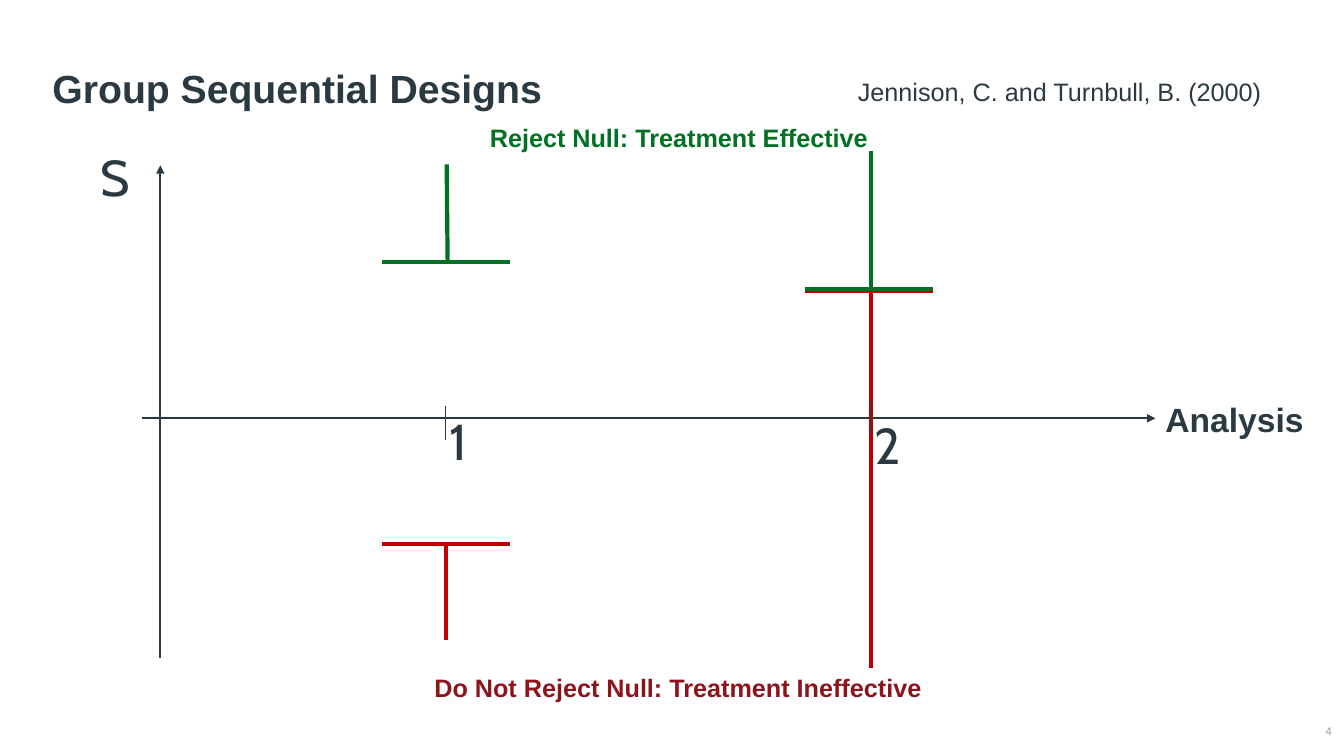
from lxml.etree import SubElement
from pptx import Presentation
from pptx.dml.color import RGBColor
from pptx.enum.shapes import MSO_CONNECTOR
from pptx.enum.text import MSO_ANCHOR, MSO_AUTO_SIZE, PP_ALIGN
from pptx.oxml.ns import qn
from pptx.util import Inches, Pt

WIDTH, HEIGHT = 13.33, 7.5
INK, GREEN, RED, DARK_RED, GREY = "2B3A42", "027123", "C00000", "8C151C", "959CA0"

TITLE = "Group Sequential Designs"
AXIS_Y, AXIS_X = 4.15, 1.59
BAR_WIDTH, TICK_HEIGHT = 1.27, 0.34

# start, end
AXES = [
    ((AXIS_X, 6.53), (AXIS_X, 1.64)),
    ((1.41, AXIS_Y), (11.46, AXIS_Y)),
]
# bar left, bar height on the slide, stem x at the bar, stem end, colour
BOUNDARIES = [
    (3.79, 5.4, 4.42, (4.42, 6.35), RED),
    (7.98, 2.89, 8.64, (8.64, 6.63), RED),
    (3.79, 2.6, 4.44, (4.43, 1.63), GREEN),
    (7.98, 2.87, 8.64, (8.64, 1.5), GREEN),
]
# centre of each analysis tick
TICKS = [(4.42, 4.2), (8.63, AXIS_Y)]
# text, left, top, width, height, size, font, colour, bold
LABELS = [
    ("S", 0.9, 1.4, 0.69, 0.71, 36, "Cabin", INK, False),
    ("Reject Null: Treatment Effective", 4.76, 1.16, 4.18, 0.4, 18, "Arial", GREEN, True),
    ("Do Not Reject Null: Treatment Ineffective", 4.21, 6.62, 5.3, 0.4, 18, "Arial", DARK_RED, True),
    ("Jennison, C. and Turnbull, B. (2000)", 8.41, 0.71, 4.8, 0.4, 18, "Arial", INK, False),
    ("Analysis", 11.46, 3.91, 1.87, 0.5, 24, "Arial", INK, True),
    ("1", 4.36, 4.02, 0.69, 0.71, 36, "Cabin", INK, False),
    ("2", 8.57, 4.06, 0.69, 0.71, 36, "Cabin", INK, False),
]
PAGE_NUMBER = ("4", 12.82, 7.16, 0.39, 0.19, 8, "Arial", GREY, False)


def rgb(value):
    return RGBColor.from_string(value)


def place(shape, left, top, width, height):
    shape.left, shape.top = Inches(left), Inches(top)
    shape.width, shape.height = Inches(width), Inches(height)


def write(shape, text, size, font_name, color, bold):
    """Fill a shape with one formatted paragraph and return the paragraph."""
    shape.text_frame.text = text
    paragraph = shape.text_frame.paragraphs[0]
    font = paragraph.runs[0].font
    font.size, font.name, font.bold = Pt(size), font_name, bold
    font.color.rgb = rgb(color)
    return paragraph


def add_line(slide, start, end, color, weight, arrow=False):
    line = slide.shapes.add_connector(
        MSO_CONNECTOR.STRAIGHT, *(Inches(value) for value in (*start, *end)))
    line.line.color.rgb = rgb(color)
    line.line.width = Pt(weight)
    if arrow:
        SubElement(line.line._get_or_add_ln(), qn("a:tailEnd"), type="triangle")
    SubElement(line._element.spPr, qn("a:effectLst"))


def add_label(slide, text, left, top, width, height, *style):
    box = slide.shapes.add_textbox(0, 0, 0, 0)
    place(box, left, top, width, height)
    box.text_frame.word_wrap = True
    box.text_frame.auto_size = MSO_AUTO_SIZE.SHAPE_TO_FIT_TEXT
    write(box, text, *style)
    return box


def add_title(slide):
    title = slide.shapes.title
    place(title, 0.42, 0.32, 12.4, 0.84)
    paragraph = write(title, TITLE, 28, "Arial", INK, True)
    paragraph.alignment = PP_ALIGN.LEFT
    paragraph.line_spacing = 0.9
    title.text_frame.vertical_anchor = MSO_ANCHOR.BOTTOM


def add_page_number(slide):
    box = add_label(slide, *PAGE_NUMBER)
    frame = box.text_frame
    frame.auto_size = MSO_AUTO_SIZE.NONE
    frame.margin_left = frame.margin_right = frame.margin_top = frame.margin_bottom = 0
    frame.vertical_anchor = MSO_ANCHOR.MIDDLE
    frame.paragraphs[0].alignment = PP_ALIGN.RIGHT


def main():
    presentation = Presentation()
    presentation.slide_width, presentation.slide_height = Inches(WIDTH), Inches(HEIGHT)
    slide = presentation.slides.add_slide(presentation.slide_layouts[5])

    add_title(slide)
    for start, end in AXES:
        add_line(slide, start, end, INK, 1.5, arrow=True)
    for left, y, stem_x, stem_end, color in BOUNDARIES:
        add_line(slide, (left, y), (left + BAR_WIDTH, y), color, 3)
        add_line(slide, (stem_x, y), stem_end, color, 3)
    for x, y in TICKS:
        add_line(slide, (x, y - TICK_HEIGHT / 2), (x, y + TICK_HEIGHT / 2), INK, 0.5)
    for label in LABELS:
        add_label(slide, *label)
    add_page_number(slide)

    presentation.save("out.pptx")


if __name__ == "__main__":
    main()
